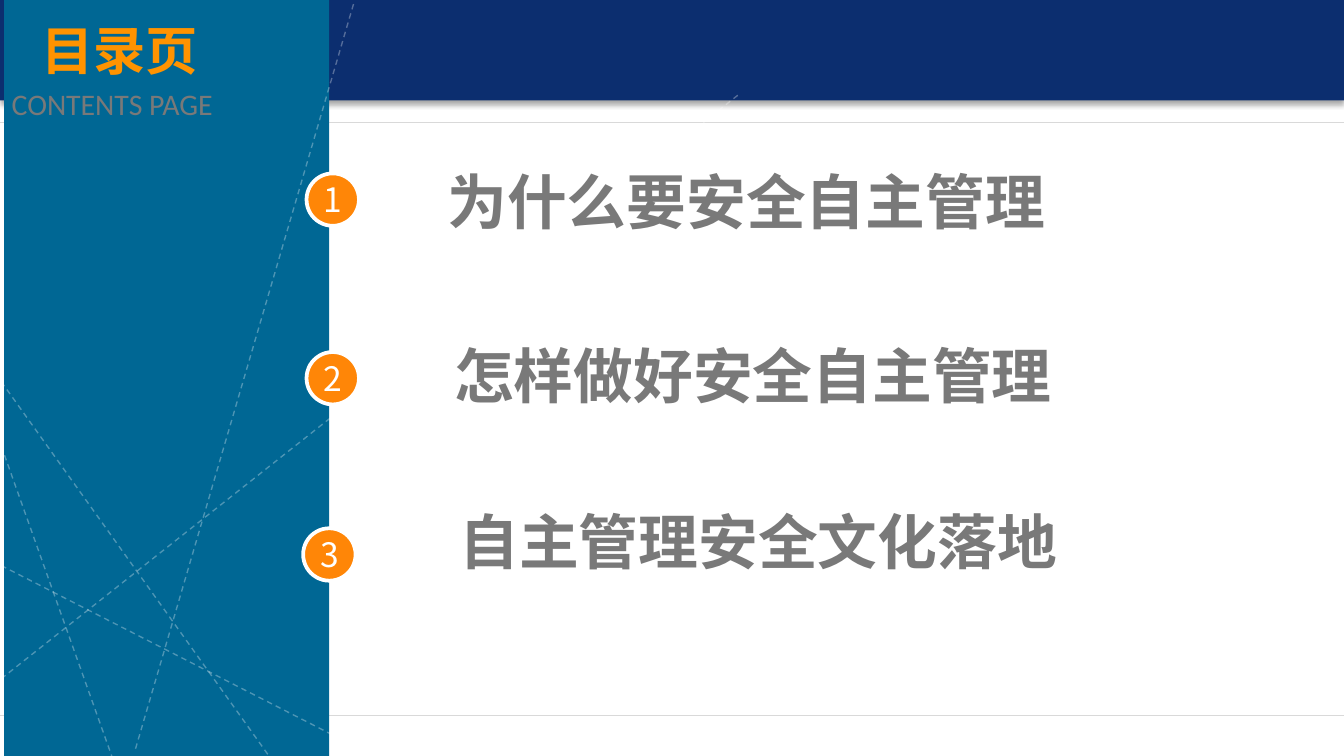
from lxml import etree
from pptx import Presentation
from pptx.dml.color import RGBColor
from pptx.enum.dml import MSO_LINE
from pptx.enum.shapes import MSO_CONNECTOR, MSO_SHAPE
from pptx.enum.text import MSO_AUTO_SIZE
from pptx.oxml.ns import qn
from pptx.util import Pt

RECTANGLE, OVAL = MSO_SHAPE.RECTANGLE, MSO_SHAPE.OVAL
STRAIGHT, DASH = MSO_CONNECTOR.STRAIGHT, MSO_LINE.DASH
GROW = MSO_AUTO_SIZE.SHAPE_TO_FIT_TEXT

WHITE = RGBColor(0xFF, 0xFF, 0xFF)
NAVY = RGBColor(0x0C, 0x2E, 0x6F)
TEAL = RGBColor(0x00, 0x67, 0x94)
ORANGE = RGBColor(0xFF, 0x86, 0x07)
AMBER = RGBColor(0xFF, 0x93, 0x00)
GREY = RGBColor(0x79, 0x79, 0x79)
RULE_GREY = RGBColor(0xD9, 0xD9, 0xD9)
CJK, LATIN = "Noto Sans CJK SC", "Calibri"

WIDTH, HEIGHT = 720, 405
RULE_TOPS = (65.5, 383)
DIAGONALS = [
    (0.7, 303, 203.8, 406.8),
    (0.7, 363.6, 395.3, 51),
    (0.7, 239, 60.5, 406.8),
    (189.4, 2.2, 72, 403.2),
    (0.7, 204.5, 145.4, 406.8),
]
# text, badge left and top, heading left, top and width
ENTRIES = [
    ("为什么要安全自主管理", (164.2, 92.9), (232.6, 85, 353.5)),
    ("怎样做好安全自主管理", (164.2, 188.6), (236.2, 177.8, 337)),
    ("自主管理安全文化落地", (162.4, 283), (239, 267.1, 341.3)),
]
BADGE_SIZE = 28.1
HEADING_HEIGHT = 48.2
# text, format, left indent
TITLE_LINES = [
    ("目录页", {"name": CJK, "size": Pt(28), "bold": True}, AMBER, 21),
    ("CONTENTS PAGE", {"name": LATIN, "size": Pt(16), "bold": False}, GREY, 5),
]


def add_shape(slide, kind, box, color, outline=None):
    shape = slide.shapes.add_shape(kind, *map(Pt, box))
    shape.shadow.inherit = False
    shape.fill.solid()
    shape.fill.fore_color.rgb = color
    if outline is None:
        shape.line.fill.background()
    else:
        shape.line.color.rgb = outline
        shape.line.width = Pt(2)
    return shape


def add_line(slide, ends, color, width):
    line = slide.shapes.add_connector(STRAIGHT, *map(Pt, ends))
    line.line.color.rgb = color
    line.line.width = Pt(width)
    etree.SubElement(line._element.spPr, qn("a:effectLst"))
    return line


def set_opacity(color_element, percent):
    etree.SubElement(color_element, qn("a:alpha"), val=str(percent * 1000))


def add_drop_shadow(shape):
    effects = shape._element.spPr.find(qn("a:effectLst"))
    shadow = etree.SubElement(
        effects, qn("a:outerShdw"), blurRad=str(Pt(3)), dist=str(Pt(1.8)),
        dir="5400000", algn="t", rotWithShape="0")
    set_opacity(etree.SubElement(shadow, qn("a:srgbClr"), val="000000"), 35)


def add_text_frame(slide, box, wrap=True):
    frame = slide.shapes.add_textbox(*map(Pt, box)).text_frame
    frame.word_wrap = wrap
    frame.auto_size = GROW
    return frame


def write(paragraph, text, values, color):
    run = paragraph.add_run()
    run.text = text
    for name, value in values.items():
        setattr(run.font, name, value)
    run.font.color.rgb = color
    properties = run._r.get_or_add_rPr()
    etree.SubElement(properties, qn("a:ea"), typeface=values["name"])


def main():
    presentation = Presentation()
    presentation.slide_width, presentation.slide_height = Pt(WIDTH), Pt(HEIGHT)
    slide = presentation.slides.add_slide(presentation.slide_layouts[6])

    for top in RULE_TOPS:
        add_line(slide, (0, top, WIDTH, top), RULE_GREY, 0.25)
    add_drop_shadow(add_shape(slide, RECTANGLE, (0, -3.6, WIDTH, 57.4), NAVY))
    add_shape(slide, RECTANGLE, (2.2, 0, 174.2, HEIGHT), TEAL)

    for ends in DIAGONALS:
        diagonal = add_line(slide, ends, WHITE, 0.75)
        diagonal.line.dash_style = DASH
        set_opacity(next(diagonal._element.spPr.iter(qn("a:srgbClr"))), 29)

    for number, (text, (left, top), heading) in enumerate(ENTRIES, start=1):
        add_shape(slide, OVAL, (left, top, BADGE_SIZE, BADGE_SIZE), ORANGE, WHITE)
        frame = add_text_frame(slide, (left + 2, top - 0.5, 25, 29), wrap=False)
        write(frame.paragraphs[0], str(number),
              {"name": CJK, "size": Pt(18)}, WHITE)
        frame = add_text_frame(slide, (*heading, HEADING_HEIGHT))
        write(frame.paragraphs[0], text,
              {"name": CJK, "size": Pt(32), "bold": True}, GREY)

    frame = add_text_frame(slide, (-5.8, 2.2, 131, 66.2))
    frame.add_paragraph()
    for paragraph, (text, values, color, indent) in zip(frame.paragraphs, TITLE_LINES):
        paragraph.line_spacing = 1.12
        paragraph._p.get_or_add_pPr().set("marL", str(Pt(indent)))
        write(paragraph, text, values, color)

    presentation.save("out.pptx")


if __name__ == "__main__":
    main()
